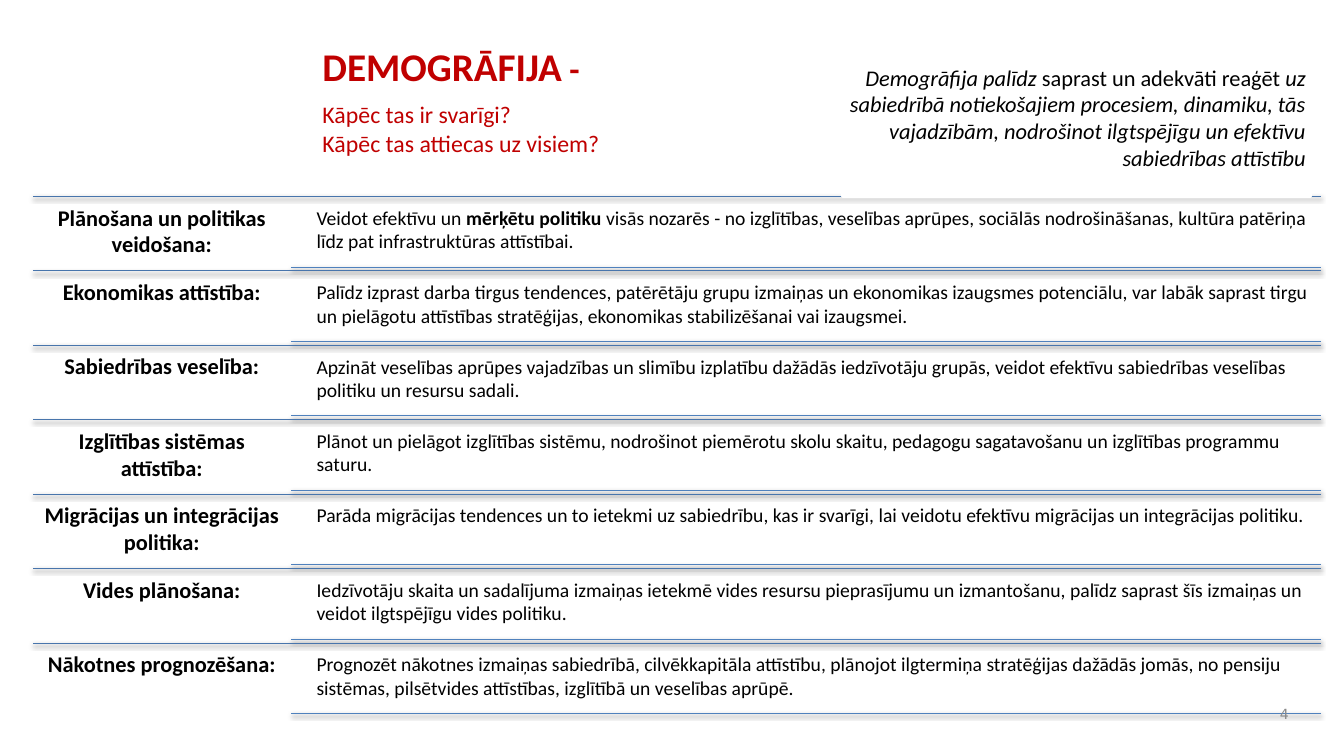
from lxml import etree
from pptx import Presentation
from pptx.dml.color import RGBColor
from pptx.enum.shapes import MSO_CONNECTOR, MSO_SHAPE
from pptx.enum.text import MSO_ANCHOR, PP_ALIGN
from pptx.oxml import parse_xml
from pptx.util import Inches, Pt

LEFT, CENTER, RIGHT = PP_ALIGN.LEFT, PP_ALIGN.CENTER, PP_ALIGN.RIGHT
TOP, MIDDLE = MSO_ANCHOR.TOP, MSO_ANCHOR.MIDDLE
STRAIGHT = MSO_CONNECTOR.STRAIGHT
RECTANGLE, ROUNDED = MSO_SHAPE.RECTANGLE, MSO_SHAPE.ROUNDED_RECTANGLE

BLACK = RGBColor(0x00, 0x00, 0x00)
WHITE = RGBColor(0xFF, 0xFF, 0xFF)
RED = RGBColor(0xC0, 0x00, 0x00)
GRAY = RGBColor(0x89, 0x89, 0x89)
ROW_BLUE = RGBColor(0x48, 0x75, 0xAC)
DETAIL_BLUE = RGBColor(0x4F, 0x81, 0xBD)

SHADOW = (
    '<a:effectLst xmlns:a="http://schemas.openxmlformats.org/drawingml/2006/main">'
    '<a:outerShdw blurRad="40000" dist="20000" dir="5400000" rotWithShape="0">'
    '<a:srgbClr val="000000"><a:alpha val="38000"/></a:srgbClr>'
    '</a:outerShdw></a:effectLst>'
)

# Grid, in inches
TABLE_LEFT, TABLE_RIGHT = 0.33, 13.1
TOPIC_WIDTH = 2.55
DETAIL_LINE_LEFT, DETAIL_LEFT = 2.89, 3.08
FIRST_ROW, LAST_ROW = 1.95, 6.38
DETAIL_GAP, DETAIL_HEIGHT = 0.03, 0.67
HEADING_LEFT, HEADING_TOP = 3.1, 0.36

ROWS = [
    ("Plānošana un politikas veidošana:",
     [("Veidot efektīvu un ", {}), ("mērķētu politiku ", {"bold": True}),
      ("visās nozarēs - no izglītības, veselības aprūpes, sociālās nodrošināšanas, "
       "kultūra patēriņa līdz pat infrastruktūras attīstībai.", {})]),
    ("Ekonomikas attīstība:",
     "Palīdz izprast darba tirgus tendences, patērētāju grupu izmaiņas un ekonomikas "
     "izaugsmes potenciālu, var labāk saprast tirgu un pielāgotu attīstības stratēģijas, "
     "ekonomikas stabilizēšanai vai izaugsmei."),
    ("Sabiedrības veselība:",
     "Apzināt veselības aprūpes vajadzības un slimību izplatību dažādās iedzīvotāju "
     "grupās, veidot efektīvu sabiedrības veselības politiku un resursu sadali."),
    ("Izglītības sistēmas attīstība:",
     "Plānot un pielāgot izglītības sistēmu, nodrošinot piemērotu skolu skaitu, "
     "pedagogu sagatavošanu un izglītības programmu saturu."),
    ("Migrācijas un integrācijas politika:",
     "Parāda migrācijas tendences un to ietekmi uz sabiedrību, kas ir svarīgi, "
     "lai veidotu efektīvu migrācijas un integrācijas politiku."),
    ("Vides plānošana:",
     "Iedzīvotāju skaita un sadalījuma izmaiņas ietekmē vides resursu pieprasījumu un "
     "izmantošanu, palīdz saprast šīs izmaiņas un veidot ilgtspējīgu vides politiku."),
    ("Nākotnes prognozēšana:",
     "Prognozēt nākotnes izmaiņas sabiedrībā, cilvēkkapitāla attīstību, plānojot "
     "ilgtermiņa stratēģijas dažādās jomās, no pensiju sistēmas, pilsētvides attīstības, "
     "izglītībā un veselības aprūpē."),
]

presentation = Presentation()
presentation.slide_width = Inches(13.33)
presentation.slide_height = Inches(7.5)
slide = presentation.slides.add_slide(presentation.slide_layouts[6])
shapes = slide.shapes


def write_text(shape, *paragraphs, size, color=BLACK, font="Calibri", bold=False,
               italic=False, align=LEFT, anchor=TOP, inset=(0.1, 0.05)):
    """Each paragraph is a string or a list of (text, format changes) runs."""
    frame = shape.text_frame
    frame.word_wrap = True
    frame.vertical_anchor = anchor
    frame.margin_left = frame.margin_right = Inches(inset[0])
    frame.margin_top = frame.margin_bottom = Inches(inset[1])
    for index, runs in enumerate(paragraphs):
        paragraph = frame.add_paragraph() if index else frame.paragraphs[0]
        paragraph.alignment = align
        for text, changes in [(runs, {})] if isinstance(runs, str) else runs:
            run = paragraph.add_run()
            run.text = text
            run.font.name = font
            run.font.size = Pt(changes.get("size", size))
            run.font.bold = changes.get("bold", bold)
            run.font.italic = changes.get("italic", italic)
            run.font.color.rgb = color
    return frame


def add_rule(left, top, color):
    rule = shapes.add_connector(STRAIGHT, Inches(left), Inches(top),
                                Inches(TABLE_RIGHT), Inches(top))
    rule.line.color.rgb = color
    rule.line.width = Pt(0.75)
    rule._element.spPr.append(parse_xml(SHADOW))


# Rows: topic on the left, explanation on the right
row_height = (LAST_ROW - FIRST_ROW) / (len(ROWS) - 1)
for number, (topic, detail) in enumerate(ROWS):
    row_top = FIRST_ROW + number * row_height
    detail_top = row_top + DETAIL_GAP
    add_rule(TABLE_LEFT, row_top, ROW_BLUE)
    topic_box = shapes.add_textbox(Inches(TABLE_LEFT), Inches(row_top),
                                   Inches(TOPIC_WIDTH), Inches(row_height))
    write_text(topic_box, topic, size=16, bold=True, align=CENTER, inset=(0.07, 0.07))
    detail_box = shapes.add_textbox(Inches(DETAIL_LEFT), Inches(detail_top),
                                    Inches(TABLE_RIGHT - DETAIL_LEFT), Inches(DETAIL_HEIGHT))
    write_text(detail_box, detail, size=14, inset=(0.06, 0.06))
    add_rule(DETAIL_LINE_LEFT, detail_top + DETAIL_HEIGHT, DETAIL_BLUE)

# Slide number
number_box = shapes.add_textbox(Inches(12.44), Inches(6.92), Inches(0.44), Inches(0.33))
write_text(number_box, "4", size=10, color=GRAY, font="DejaVu Sans", align=RIGHT, anchor=MIDDLE)

# Heading, with the questions set below the title
questions_box = shapes.add_textbox(Inches(HEADING_LEFT), Inches(HEADING_TOP),
                                   Inches(7.01), Inches(1.25))
questions = write_text(questions_box, "Kāpēc tas ir svarīgi?", "Kāpēc tas attiecas uz visiem?",
                       size=17, color=RED)
questions.margin_top = Inches(0.63)
title_box = shapes.add_textbox(Inches(HEADING_LEFT), Inches(HEADING_TOP),
                               Inches(6.67), Inches(0.59))
write_text(title_box, [("DEMOGRĀFIJA", {}), (" -", {"size": 24})],
           size=28, color=RED, bold=True, anchor=MIDDLE)

# Summary on white panels
for kind, left, top, width, height in [(ROUNDED, 8.27, 0.14, 4.72, 1.32),
                                       (RECTANGLE, 8.36, 0.38, 4.64, 1.57)]:
    panel = shapes.add_shape(kind, Inches(left), Inches(top), Inches(width), Inches(height))
    panel.shadow.inherit = False
    panel.fill.solid()
    panel.fill.fore_color.rgb = WHITE
    panel.line.color.rgb = WHITE
    panel.line.width = Pt(2)
write_text(panel,
           [("Demogrāfija palīdz", {}),
            (" saprast un adekvāti reaģēt ", {"italic": False}),
            ("uz sabiedrībā notiekošajiem procesiem, dinamiku, tās vajadzībām, "
             "nodrošinot ilgtspējīgu un efektīvu sabiedrības attīstību", {})],
           size=16, italic=True, align=RIGHT, anchor=MIDDLE, inset=(0.05, 0.03))

presentation.save("out.pptx")
